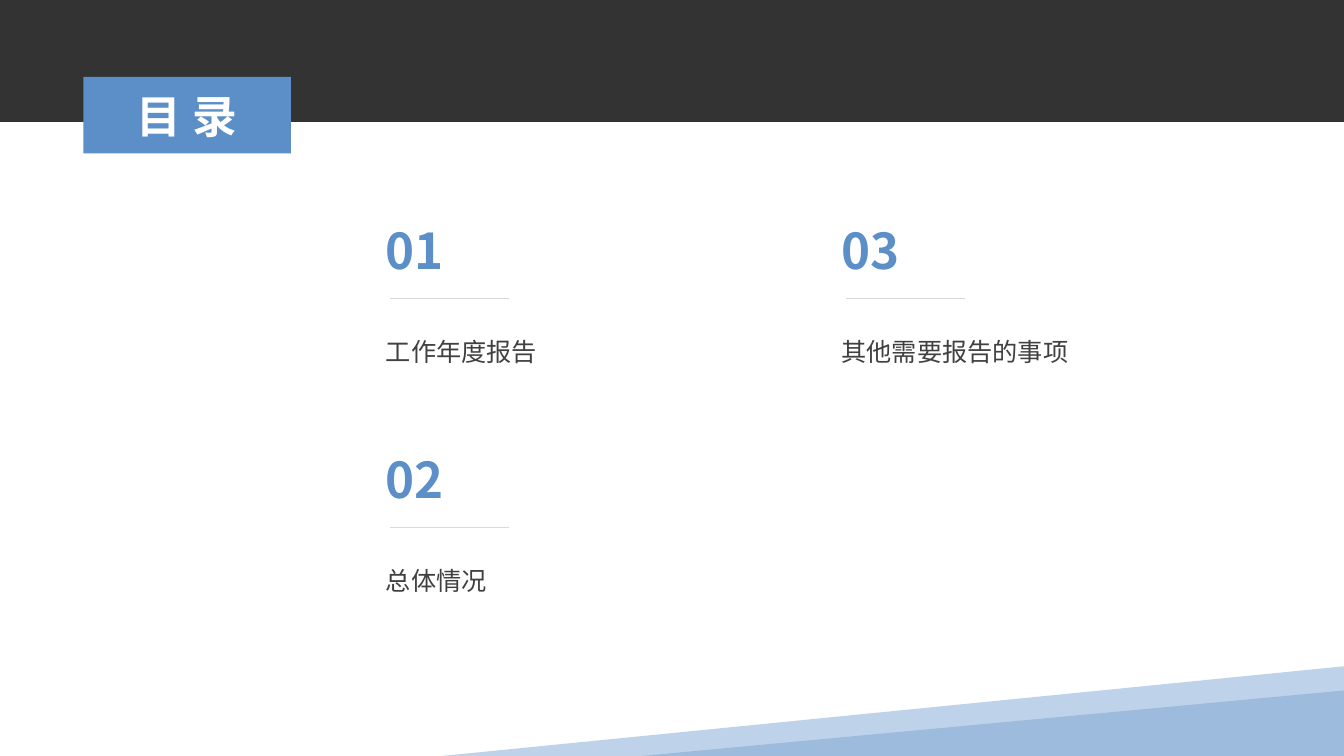
from pptx import Presentation
from pptx.dml.color import RGBColor
from pptx.enum.shapes import MSO_CONNECTOR, MSO_SHAPE
from pptx.enum.text import MSO_ANCHOR, MSO_AUTO_SIZE, PP_ALIGN
from pptx.oxml.ns import qn
from pptx.util import Pt
from lxml import etree

RECTANGLE, TRIANGLE = MSO_SHAPE.RECTANGLE, MSO_SHAPE.ISOSCELES_TRIANGLE
STRAIGHT = MSO_CONNECTOR.STRAIGHT
MIDDLE, NO_FIT = MSO_ANCHOR.MIDDLE, MSO_AUTO_SIZE.NONE
CENTER, JUSTIFY = PP_ALIGN.CENTER, PP_ALIGN.JUSTIFY

WIDTH, HEIGHT = 960, 540
FONT = "Noto Sans CJK SC"
COLORS = {
    "band": "333333", "accent": "5C8FC7", "pale": "BED2E9", "mid": "9DBCDD",
    "text": "404040", "rule": "D9D9D9", "white": "FFFFFF",
}
FORMATS = {
    "title": {"size": Pt(32), "bold": True},
    "number": {"size": Pt(35.2), "bold": True},
    "topic": {"size": Pt(18), "bold": False},
}
PARAGRAPHS = {
    "title": {"alignment": CENTER},
    "number": {},
    "topic": {"alignment": JUSTIFY, "line_spacing": 1.5, "space_after": Pt(20)},
}


def rgb(color):
    return RGBColor.from_string(COLORS[color])


def set_all(target, values):
    for name, value in values.items():
        setattr(target, name, value)


class AgendaSlide:
    """Style and current slide, with a method for each kind of element."""

    def __init__(self, slide):
        self.slide = slide
        self.shapes = slide.shapes

    def paint(self, shape, color):
        shape.shadow.inherit = False
        shape.fill.solid()
        shape.fill.fore_color.rgb = rgb(color)
        shape.line.fill.background()

    def block(self, kind, left, top, width, height, color):
        block = self.shapes.add_shape(kind, Pt(left), Pt(top), Pt(width), Pt(height))
        self.paint(block, color)
        return block

    def polygon(self, points, color):
        corners = [(Pt(x), Pt(y)) for x, y in points]
        builder = self.shapes.build_freeform(*corners[0])
        builder.add_line_segments(corners[1:], close=True)
        self.paint(builder.convert_to_shape(), color)

    def fill_text(self, frame, text, style, color):
        set_all(frame, {"word_wrap": True, "auto_size": NO_FIT})
        paragraph = frame.paragraphs[0]
        set_all(paragraph, PARAGRAPHS[style])
        run = paragraph.add_run()
        run.text = text
        set_all(run.font, {"name": FONT, **FORMATS[style]})
        run.font.color.rgb = rgb(color)
        properties = run._r.get_or_add_rPr()
        etree.SubElement(properties, qn("a:ea")).set("typeface", FONT)
        return properties

    def text(self, left, top, width, height, text, style, color):
        box = self.shapes.add_textbox(Pt(left), Pt(top), Pt(width), Pt(height))
        self.fill_text(box.text_frame, text, style, color)

    def rule(self, left, top, length):
        rule = self.shapes.add_connector(
            STRAIGHT, Pt(left), Pt(top), Pt(left + length), Pt(top))
        rule.line.color.rgb = rgb("rule")
        rule.line.width = Pt(0.5)
        etree.SubElement(rule._element.spPr, qn("a:effectLst"))

    def title(self, left, top, width, height, text):
        title = self.shapes.title
        set_all(title, {"left": Pt(left), "top": Pt(top),
                        "width": Pt(width), "height": Pt(height)})
        title.fill.solid()
        title.fill.fore_color.rgb = rgb("accent")
        title.text_frame.vertical_anchor = MIDDLE
        self.fill_text(title.text_frame, text, "title", "white").set("spc", "800")
        # Bring the title in front of the band
        title._element.getparent().append(title._element)


def main():
    deck = Presentation()
    set_all(deck, {"slide_width": Pt(WIDTH), "slide_height": Pt(HEIGHT)})
    agenda = AgendaSlide(deck.slides.add_slide(deck.slide_layouts[5]))

    # Slanted wedges at the foot
    agenda.polygon([(WIDTH, 475.9), (WIDTH, 535.7), (645.8, HEIGHT), (315.4, HEIGHT)],
                   "pale")
    wedge = agenda.block(TRIANGLE, 458, 493.2, WIDTH - 458, HEIGHT - 493.2, "mid")
    wedge.adjustments[0] = 1

    # Header band
    agenda.block(RECTANGLE, 0, 0, WIDTH, 87.2, "band")

    # Topics, filled down each column
    topics = ["工作年度报告", "总体情况", "其他需要报告的事项"]
    for index, topic in enumerate(topics):
        column, row = divmod(index, 2)
        left = 268.6 + column * 325.4
        top = 226.1 + row * 163.6
        agenda.text(left, top, 254.9, 75.6, topic, "topic", "text")
        agenda.text(left, top - 72, 64, 60.5, f"{index + 1:02d}", "number", "accent")
        agenda.rule(left + 10, top - 13, 85)

    # Title
    agenda.title(59.6, 54.9, 148.2, 54.7, "目录")

    deck.save("out.pptx")


if __name__ == "__main__":
    main()
